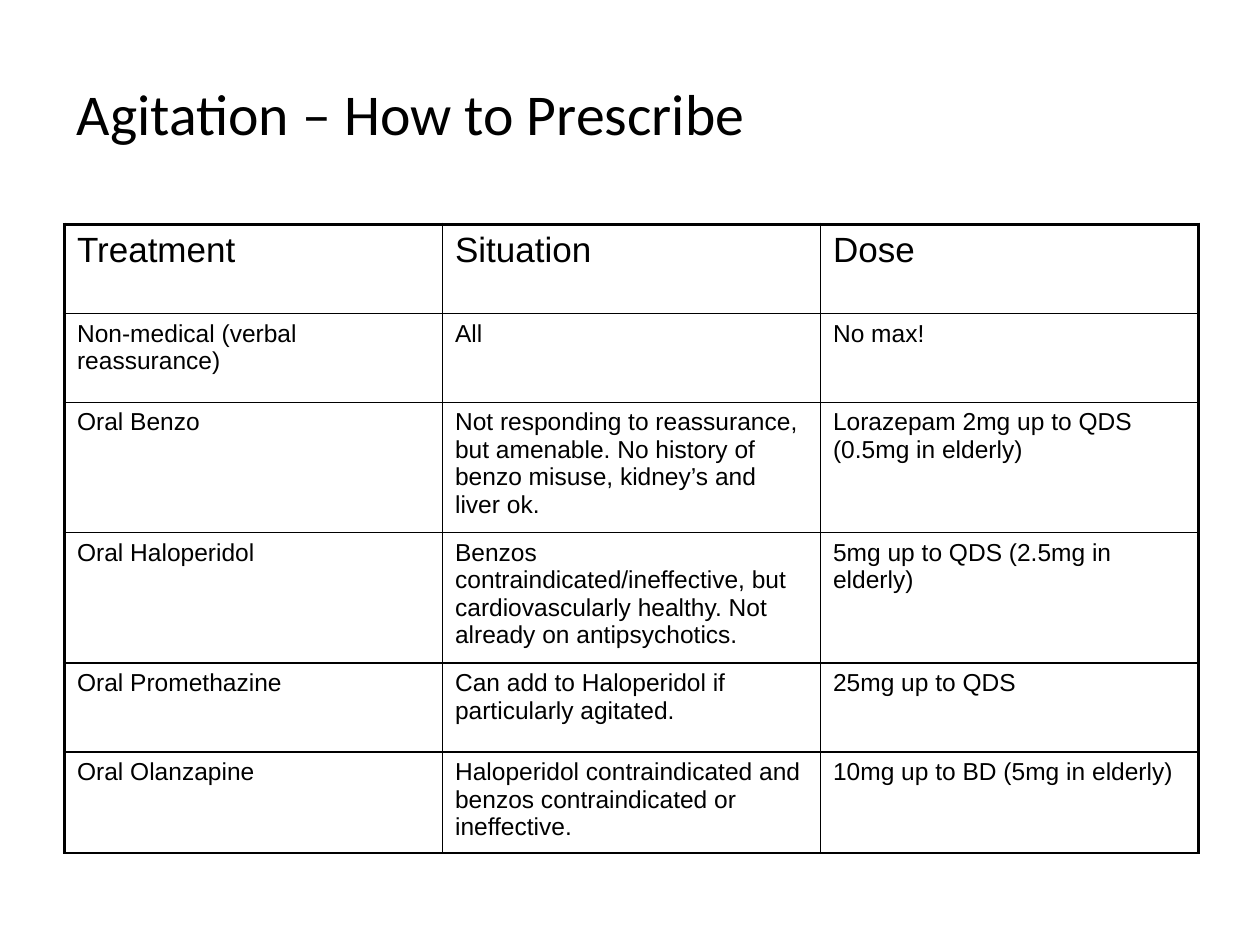
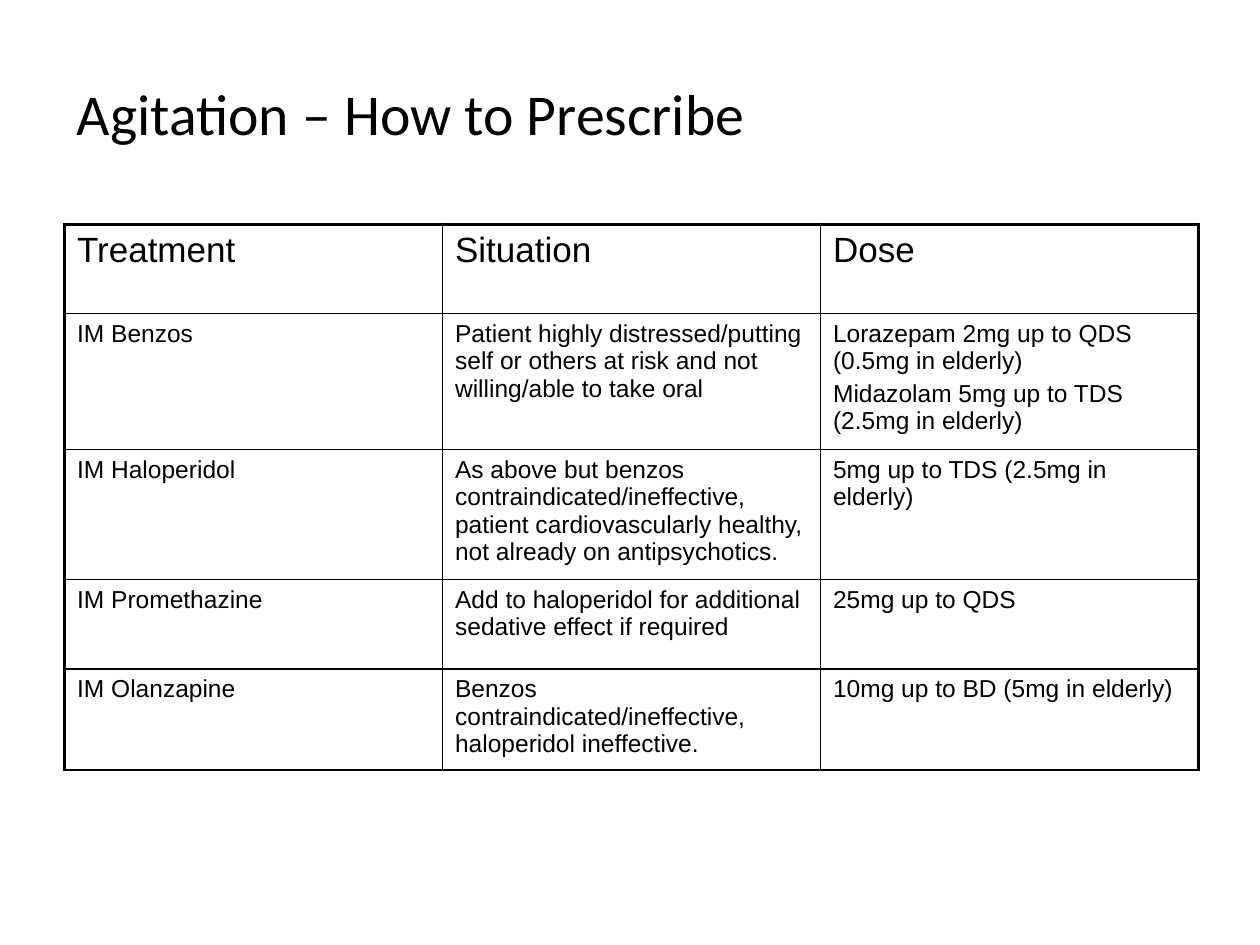
from dataclasses import dataclass

from lxml.etree import SubElement
from pptx import Presentation
from pptx.dml.color import RGBColor
from pptx.enum.text import MSO_ANCHOR
from pptx.oxml.ns import qn
from pptx.util import Cm, Pt


@dataclass(frozen=True)
class Theme:
    ink: str = "000000"
    paper: str = "FFFFFF"
    title_font: str = "Calibri"
    table_font: str = "Arial"
    title_size: float = 33
    head_size: float = 20
    body_size: float = 14
    thick: float = 2.25
    thin: float = 1
    gap: float = 2.8


THEME = Theme()
TITLE = "Agitation – How to Prescribe"
HEADS = ["Treatment", "Situation", "Dose"]

# Boxes: left, top, width, height in cm
TITLE_BOX = (1.3, 0.76, 22.86, 3.18)
TABLE_BOX = (1.3, 4.52, 22.86)
HEAD_ROW = 1.8

# Each row: height in cm, then the text of its cells; a list holds paragraphs
ORAL = [
    (1.79, "Non-medical (verbal reassurance)", "All", "No max!"),
    (2.62, "Oral Benzo",
     "Not responding to reassurance, but amenable. No history of benzo "
     "misuse, kidney’s and liver ok.",
     "Lorazepam 2mg up to QDS (0.5mg in elderly)"),
    (2.62, "Oral Haloperidol",
     "Benzos contraindicated/ineffective, but cardiovascularly healthy. "
     "Not already on antipsychotics.",
     "5mg up to QDS (2.5mg in elderly)"),
    (1.8, "Oral Promethazine",
     "Can add to Haloperidol if particularly agitated.", "25mg up to QDS"),
    (2.03, "Oral Olanzapine",
     "Haloperidol contraindicated and benzos contraindicated or ineffective.",
     "10mg up to BD (5mg in elderly)"),
]
INJECTED = [
    (2.74, "IM Benzos",
     "Patient highly distressed/putting self or others at risk and not "
     "willing/able to take oral",
     ["Lorazepam 2mg up to QDS (0.5mg in elderly)",
      "Midazolam 5mg up to TDS (2.5mg in elderly)"]),
    (2.62, "IM Haloperidol",
     "As above but benzos contraindicated/ineffective, patient "
     "cardiovascularly healthy, not already on antipsychotics.",
     "5mg up to TDS (2.5mg in elderly)"),
    (1.8, "IM Promethazine",
     "Add to haloperidol for additional sedative effect if required",
     "25mg up to QDS"),
    (2.03, "IM Olanzapine",
     "Benzos contraindicated/ineffective, haloperidol ineffective.",
     "10mg up to BD (5mg in elderly)"),
]


def add_run(para, text, font, size):
    run = para.add_run()
    run.text = text
    run.font.name = font
    run.font.size = Pt(size)
    run.font.color.rgb = RGBColor.from_string(THEME.ink)


def add_title(slide, box):
    frame = slide.shapes.add_textbox(*map(Cm, box)).text_frame
    frame.word_wrap = True
    frame.vertical_anchor = MSO_ANCHOR.MIDDLE
    para = frame.paragraphs[0]
    para.line_spacing = 0.9
    add_run(para, TITLE, THEME.title_font, THEME.title_size)


def set_edges(cell, widths):
    props = cell._tc.get_or_add_tcPr()
    for side, width in widths.items():
        line = SubElement(props, qn(f"a:ln{side}"), w=str(Pt(width)))
        fill = SubElement(line, qn("a:solidFill"))
        SubElement(fill, qn("a:srgbClr"), val=THEME.ink)


def fill_cell(cell, text, size):
    lines = [text] if isinstance(text, str) else text
    frame = cell.text_frame
    for i, line in enumerate(lines):
        para = frame.add_paragraph() if i else frame.paragraphs[0]
        if i:
            para.space_before = Pt(THEME.gap)
        add_run(para, line, THEME.table_font, size)


def add_grid(slide, box, doses):
    left, top, width = box
    rows = [(HEAD_ROW, *HEADS), *doses]
    height = sum(row[0] for row in rows)
    count = len(HEADS)
    grid = slide.shapes.add_table(
        len(rows), count, Cm(left), Cm(top), Cm(width), Cm(height)).table
    grid.first_row = grid.horz_banding = False
    for col in grid.columns:
        col.width = Cm(width / count)

    for r, (tall, *texts) in enumerate(rows):
        grid.rows[r].height = Cm(tall)
        for c, text in enumerate(texts):
            cell = grid.cell(r, c)
            # The outer frame is thick except along the bottom
            heavy = {"L": c == 0, "R": c == count - 1, "T": r == 0, "B": False}
            set_edges(cell, {side: THEME.thick if on else THEME.thin
                             for side, on in heavy.items()})
            cell.fill.background()
            fill_cell(cell, text, THEME.body_size if r else THEME.head_size)


def add_page(deck, doses):
    slide = deck.slides.add_slide(deck.slide_layouts[6])
    back = slide.background.fill
    back.solid()
    back.fore_color.rgb = RGBColor.from_string(THEME.paper)
    add_title(slide, TITLE_BOX)
    add_grid(slide, TABLE_BOX, doses)


def main():
    deck = Presentation()
    deck.slide_width, deck.slide_height = Cm(25.4), Cm(19.05)
    for doses in (ORAL, INJECTED):
        add_page(deck, doses)
    deck.save("out.pptx")


if __name__ == "__main__":
    main()
